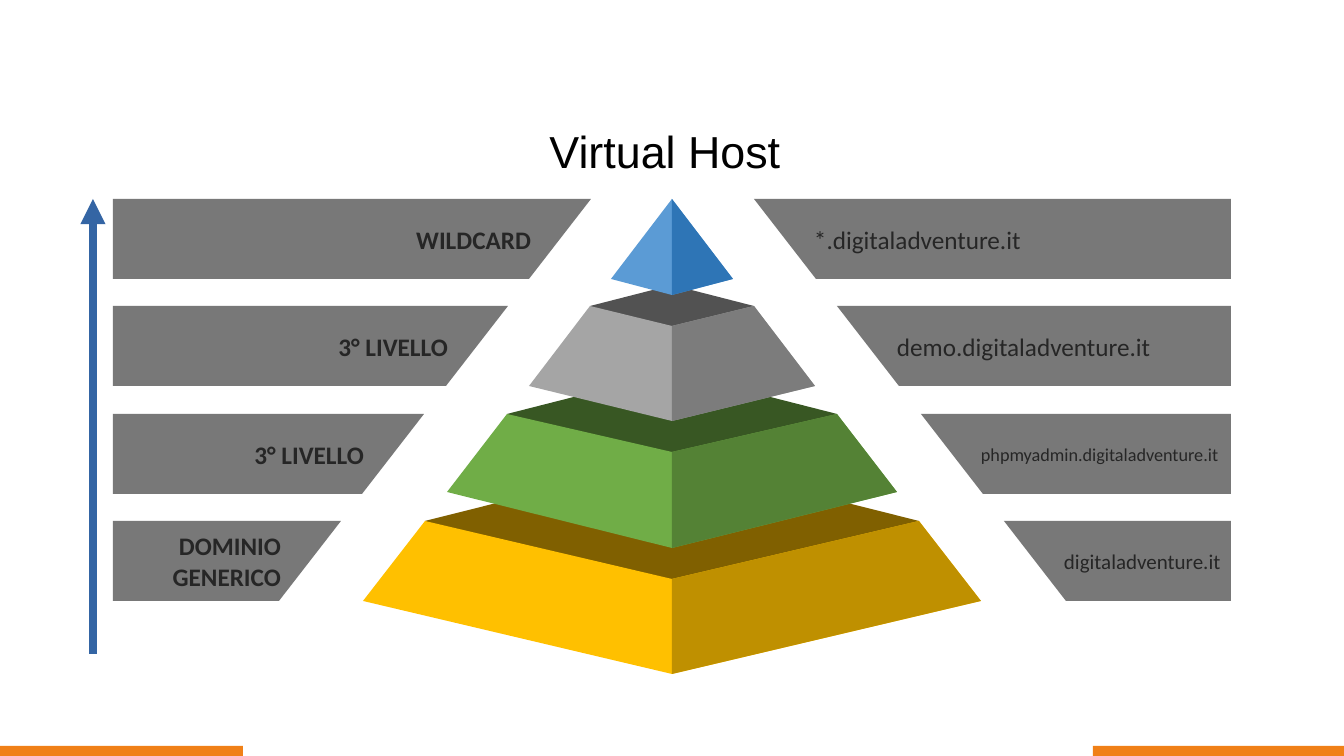
import pptx
import pptx.util
from lxml import etree
from pptx.dml.color import RGBColor
from pptx.enum.shapes import MSO_CONNECTOR, MSO_SHAPE
from pptx.enum.text import MSO_ANCHOR, PP_ALIGN
from pptx.oxml.ns import qn

# Content
TITLE = "Virtual Host"
ROWS = [  # left label, right address, address size in points
    ("WILDCARD", "*.digitaladventure.it", 18),
    ("3° LIVELLO", "demo.digitaladventure.it", 18),
    ("3° LIVELLO", "phpmyadmin.digitaladventure.it", 13),
    ("DOMINIO GENERICO", "digitaladventure.it", 15),
]
COLORS = {
    "strip": "F08017", "bar": "535353", "label": "262626", "title": "000000",
    "arrow": "3465A4",
    "blue": "5B9BD5", "blue_dark": "2E75B6",
    "gray": "A5A5A5", "gray_dark": "7C7C7C", "gray_lid": "525252",
    "green": "70AD47", "green_dark": "548235", "green_lid": "385723",
    "gold": "FFC000", "gold_dark": "BF9000", "gold_lid": "806000",
}

# Pyramid, in px: name, half width and y of shoulder, half width and y of base,
# y of front edge top and bottom, y of lid back and front corner
TIERS = [
    ("gold", 247, 521, 309, 601, 579, 674, 459, 651),
    ("green", 165, 414, 225, 492, 452, 548, 372, 522),
    ("gray", 82, 306, 143, 386, 326, 421, 285, 401),
    ("blue", 0, 199, 61, 279, 199, 295, None, None),
]
CENTER = 672
STRIPS = [(-1, 746, 244, 14), (1093, 746, 254, 14)]

# Side bars, in px
BAR_LEFT, BAR_RIGHT, BAR_TOP, BAR_H, SLANT = 113, 1231, 199, 80, 62
LEFT_EDGE, RIGHT_EDGE = 591, 754
ROW_STEP, EDGE_STEP = 107.33, 83.33

EMU_PER_PX = 914400 / 100.8


def px(n):
    return pptx.util.Emu(round(n * EMU_PER_PX))


def paint(sp, color):
    sp.shadow.inherit = False
    sp.fill.solid()
    sp.fill.fore_color.rgb = RGBColor.from_string(COLORS[color])
    sp.line.fill.background()


def polygon(s, points, color):
    fb = s.shapes.build_freeform(*points[0], scale=EMU_PER_PX)
    fb.add_line_segments(points[1:], close=True)
    sp = fb.convert_to_shape()
    paint(sp, color)
    return sp


def write(sp, text, size, font, color, align, insets, bold=False):
    tf = sp.text_frame
    tf.word_wrap = True
    tf.vertical_anchor = MSO_ANCHOR.MIDDLE
    tf.margin_left, tf.margin_top, tf.margin_right, tf.margin_bottom = map(px, insets)
    p = tf.paragraphs[0]
    p.text = text
    p.alignment = align
    p.font.size = pptx.util.Pt(size)
    p.font.name = font
    p.font.bold = bold
    p.font.color.rgb = RGBColor.from_string(COLORS[color])


def bar(s, points, text, size, align, insets, bold):
    sp = polygon(s, points, "bar")
    rgb = sp.fill._xPr.find(".//" + qn("a:srgbClr"))
    etree.SubElement(rgb, qn("a:alpha")).set("val", "78000")
    write(sp, text, size, "Calibri", "label", align, insets, bold)


def main():
    prs = pptx.Presentation()
    prs.slide_width, prs.slide_height = px(1344), px(756)
    s = prs.slides.add_slide(prs.slide_layouts[6])

    # Bottom strips and title
    for box in STRIPS:
        paint(s.shapes.add_shape(MSO_SHAPE.RECTANGLE, *map(px, box)), "strip")
    title = s.shapes.add_textbox(*map(px, (161, 101, 1008, 100)))
    write(title, TITLE, 32, "Arial", "title", PP_ALIGN.CENTER, (0, 0, 0, 0))

    # Pyramid: lids behind, then each front with its shaded right half
    for name, half, y, _, _, _, _, back, front in TIERS:
        if back is not None:
            polygon(s, [(CENTER, back), (CENTER + half, y),
                        (CENTER, front), (CENTER - half, y)], name + "_lid")
    for name, half, y, base, base_y, top, bottom, _, _ in TIERS:
        right = [(CENTER, top), (CENTER + half, y),
                 (CENTER + base, base_y), (CENTER, bottom)]
        left = [(CENTER - base, base_y), (CENTER - half, y)]
        polygon(s, right + left, name)
        polygon(s, right, name + "_dark")

    # Side bars
    for i, (label, address, size) in enumerate(ROWS):
        y = round(BAR_TOP + i * ROW_STEP)
        y2 = y + BAR_H
        x = round(LEFT_EDGE - i * EDGE_STEP)
        bar(s, [(BAR_LEFT, y), (x, y), (x - SLANT, y2), (BAR_LEFT, y2)],
            label, 18, PP_ALIGN.RIGHT, (8, 4, 60, 4), True)
        x = round(RIGHT_EDGE + i * EDGE_STEP)
        bar(s, [(x, y), (BAR_RIGHT, y), (BAR_RIGHT, y2), (x + SLANT, y2)],
            address, size, PP_ALIGN.LEFT, (60, 5, 10, 5), False)

    # Upward arrow
    arrow = s.shapes.add_connector(MSO_CONNECTOR.STRAIGHT,
                                   px(93), px(654), px(93), px(199))
    arrow.line.color.rgb = RGBColor.from_string(COLORS["arrow"])
    arrow.line.width = pptx.util.Pt(6)
    etree.SubElement(arrow.line._get_or_add_ln(), qn("a:tailEnd")).set("type", "triangle")
    etree.SubElement(arrow._element.spPr, qn("a:effectLst"))

    prs.save("out.pptx")


if __name__ == "__main__":
    main()
